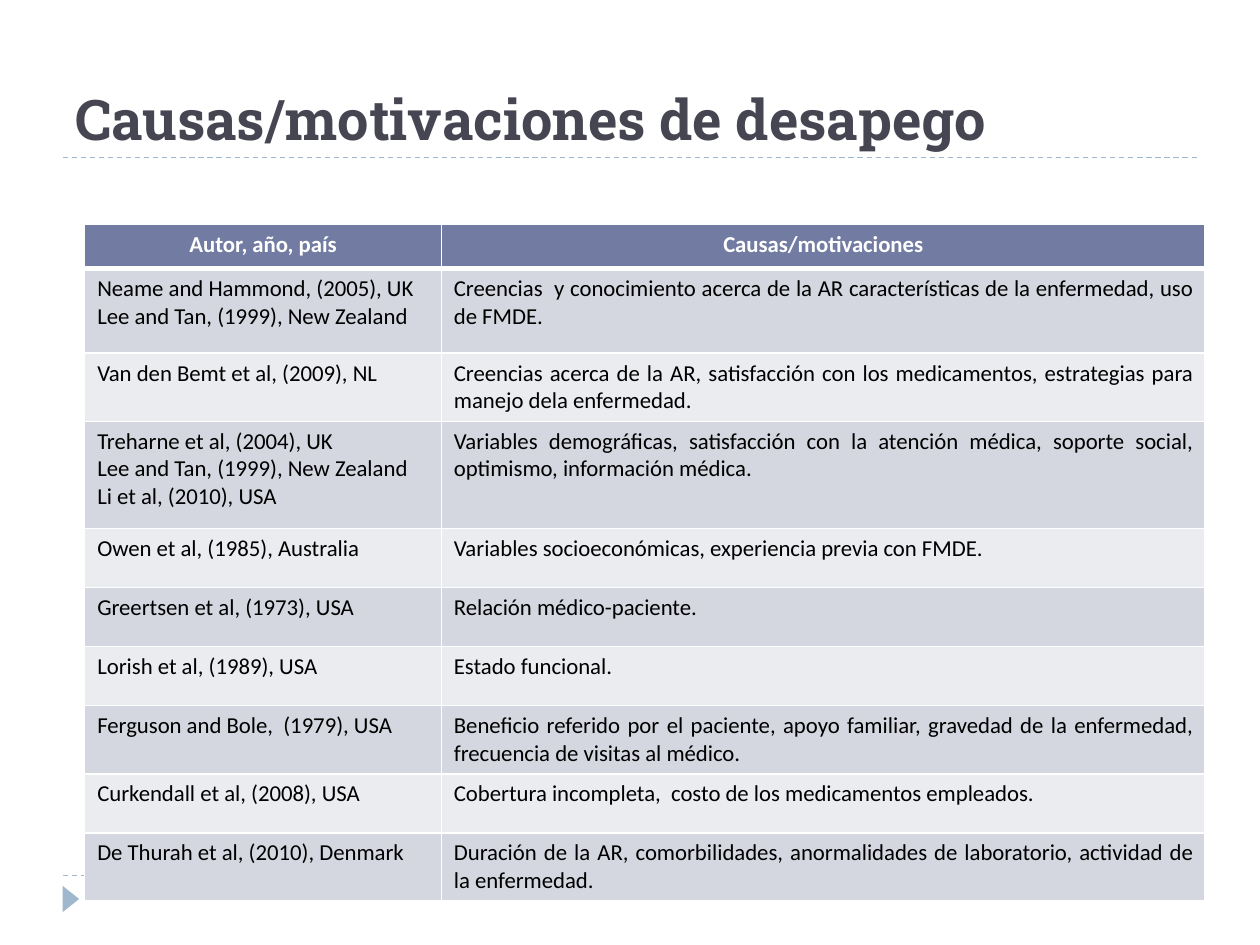
from dataclasses import dataclass

from lxml import etree
from pptx import Presentation
from pptx.dml.color import RGBColor
from pptx.enum.dml import MSO_LINE
from pptx.enum.shapes import MSO_CONNECTOR, MSO_SHAPE
from pptx.enum.text import MSO_ANCHOR, PP_ALIGN
from pptx.oxml.ns import qn
from pptx.util import Pt

STRAIGHT = MSO_CONNECTOR.STRAIGHT
TRIANGLE = MSO_SHAPE.ISOSCELES_TRIANGLE
DASH = MSO_LINE.DASH
BOTTOM = MSO_ANCHOR.BOTTOM
LEFT, CENTER, JUSTIFY = PP_ALIGN.LEFT, PP_ALIGN.CENTER, PP_ALIGN.JUSTIFY


@dataclass(frozen=True)
class Theme:
    title_font: str = "Roboto Slab"
    body_font: str = "Calibri"
    title_size: float = 32
    body_size: float = 13
    title_color: str = "464653"
    body_color: str = "000000"
    white: str = "FFFFFF"
    accent: str = "9FB8CD"
    header_fill: str = "727CA3"
    band_fills: tuple = ("D5D7E0", "EBECF0")
    rule_width: float = 0.75
    border_width: float = 1
    header_border_width: float = 3


# Table content: authors (one paragraph each), causes, row height
HEADER = ("Autor, año, país", "Causas/motivaciones")
HEADER_HEIGHT = 25.2
ROW_HEIGHT = 33.8
STUDIES = [
    (["Neame and Hammond, (2005), UK", "Lee and Tan, (1999), New Zealand"],
     "Creencias  y conocimiento acerca de la AR características de la enfermedad, uso de FMDE.",
     48.2),
    (["Van den Bemt et al, (2009), NL"],
     "Creencias acerca de la AR, satisfacción con los medicamentos, estrategias para manejo dela enfermedad.",
     ROW_HEIGHT),
    (["Treharne et al, (2004), UK", "Lee and Tan, (1999), New Zealand", "Li et al, (2010), USA"],
     "Variables demográficas, satisfacción con la atención médica, soporte social, optimismo, información médica.",
     61.2),
    (["Owen et al, (1985), Australia"],
     "Variables socioeconómicas, experiencia previa con FMDE.", ROW_HEIGHT),
    (["Greertsen et al, (1973), USA"], "Relación médico-paciente.", ROW_HEIGHT),
    (["Lorish et al, (1989), USA"], "Estado funcional.", ROW_HEIGHT),
    (["Ferguson and Bole,  (1979), USA"],
     "Beneficio referido por el paciente, apoyo familiar, gravedad de la enfermedad, frecuencia de visitas al médico.",
     ROW_HEIGHT),
    (["Curkendall et al, (2008), USA"],
     "Cobertura incompleta,  costo de los medicamentos empleados.", ROW_HEIGHT),
    (["De Thurah et al, (2010), Denmark"],
     "Duración de la AR, comorbilidades, anormalidades de laboratorio, actividad de la enfermedad.",
     ROW_HEIGHT),
]


class SlideBuilder:
    def __init__(self, slide, theme):
        self.slide = slide
        self.theme = theme

    def add_lines(self, frame, lines, font, size, color, bold=False, align=LEFT):
        for index, line in enumerate(lines):
            paragraph = frame.add_paragraph() if index else frame.paragraphs[0]
            paragraph.alignment = align
            run = paragraph.add_run()
            run.text = line
            run.font.name = font
            run.font.size = Pt(size)
            run.font.bold = bold
            run.font.color.rgb = RGBColor.from_string(color)

    def title(self, text, left, top, width, height):
        box = self.slide.shapes.add_textbox(Pt(left), Pt(top), Pt(width), Pt(height))
        frame = box.text_frame
        frame.word_wrap = True
        frame.vertical_anchor = BOTTOM
        self.add_lines(frame, [text], self.theme.title_font, self.theme.title_size,
                       self.theme.title_color, bold=True)

    def dashed_rule(self, left, right, y):
        rule = self.slide.shapes.add_connector(STRAIGHT, Pt(left), Pt(y), Pt(right), Pt(y))
        rule.line.color.rgb = RGBColor.from_string(self.theme.accent)
        rule.line.width = Pt(self.theme.rule_width)
        rule.line.dash_style = DASH
        etree.SubElement(rule._element.spPr, qn("a:effectLst"))

    def page_marker(self, left, top, width, height):
        marker = self.slide.shapes.add_shape(TRIANGLE, Pt(left), Pt(top), Pt(width), Pt(height))
        marker.rotation = 90
        marker.shadow.inherit = False
        marker.fill.solid()
        marker.fill.fore_color.rgb = RGBColor.from_string(self.theme.accent)
        marker.line.fill.background()

    def cell(self, cell, lines, fill, color, align, top_width, bottom_width, bold=False):
        side = self.theme.border_width
        properties = cell._tc.get_or_add_tcPr()
        borders = {"lnL": side, "lnR": side, "lnT": top_width, "lnB": bottom_width}
        for tag, width in borders.items():
            border = etree.SubElement(properties, qn(f"a:{tag}"), w=str(int(Pt(width))))
            solid = etree.SubElement(border, qn("a:solidFill"))
            etree.SubElement(solid, qn("a:srgbClr"), val=self.theme.white)
        cell.fill.solid()
        cell.fill.fore_color.rgb = RGBColor.from_string(fill)
        self.add_lines(cell.text_frame, lines, self.theme.body_font, self.theme.body_size,
                       color, bold, align)

    def study_table(self, left, top, column_widths):
        theme = self.theme
        heights = [HEADER_HEIGHT] + [height for _, _, height in STUDIES]
        table = self.slide.shapes.add_table(
            len(heights), len(column_widths), Pt(left), Pt(top),
            Pt(sum(column_widths)), Pt(sum(heights))).table
        for column, width in zip(table.columns, column_widths):
            column.width = Pt(width)
        for row, height in zip(table.rows, heights):
            row.height = Pt(height)

        for column, heading in enumerate(HEADER):
            self.cell(table.cell(0, column), [heading], theme.header_fill, theme.white,
                      CENTER, theme.border_width, theme.header_border_width, bold=True)
        for row, (authors, causes, _) in enumerate(STUDIES, start=1):
            fill = theme.band_fills[(row - 1) % 2]
            top_width = theme.header_border_width if row == 1 else theme.border_width
            for column, (lines, align) in enumerate([(authors, LEFT), ([causes], JUSTIFY)]):
                self.cell(table.cell(row, column), lines, fill, theme.body_color, align,
                          top_width, theme.border_width)


def main():
    presentation = Presentation()
    presentation.slide_width = Pt(720)
    presentation.slide_height = Pt(540)
    slide = presentation.slides.add_slide(presentation.slide_layouts[6])
    builder = SlideBuilder(slide, Theme())

    # Frame: dashed rules and page marker
    for y in (500.4, 90):
        builder.dashed_rule(36, 684, y)
    builder.page_marker(33, 509, 15, 9.4)

    # Table of studies
    builder.study_table(48.4, 128.4, (203.8, 436.4))

    # Title
    builder.title("Causas/motivaciones de desapego", 36, 12.2, 648, 77.8)

    presentation.save("out.pptx")


if __name__ == "__main__":
    main()
